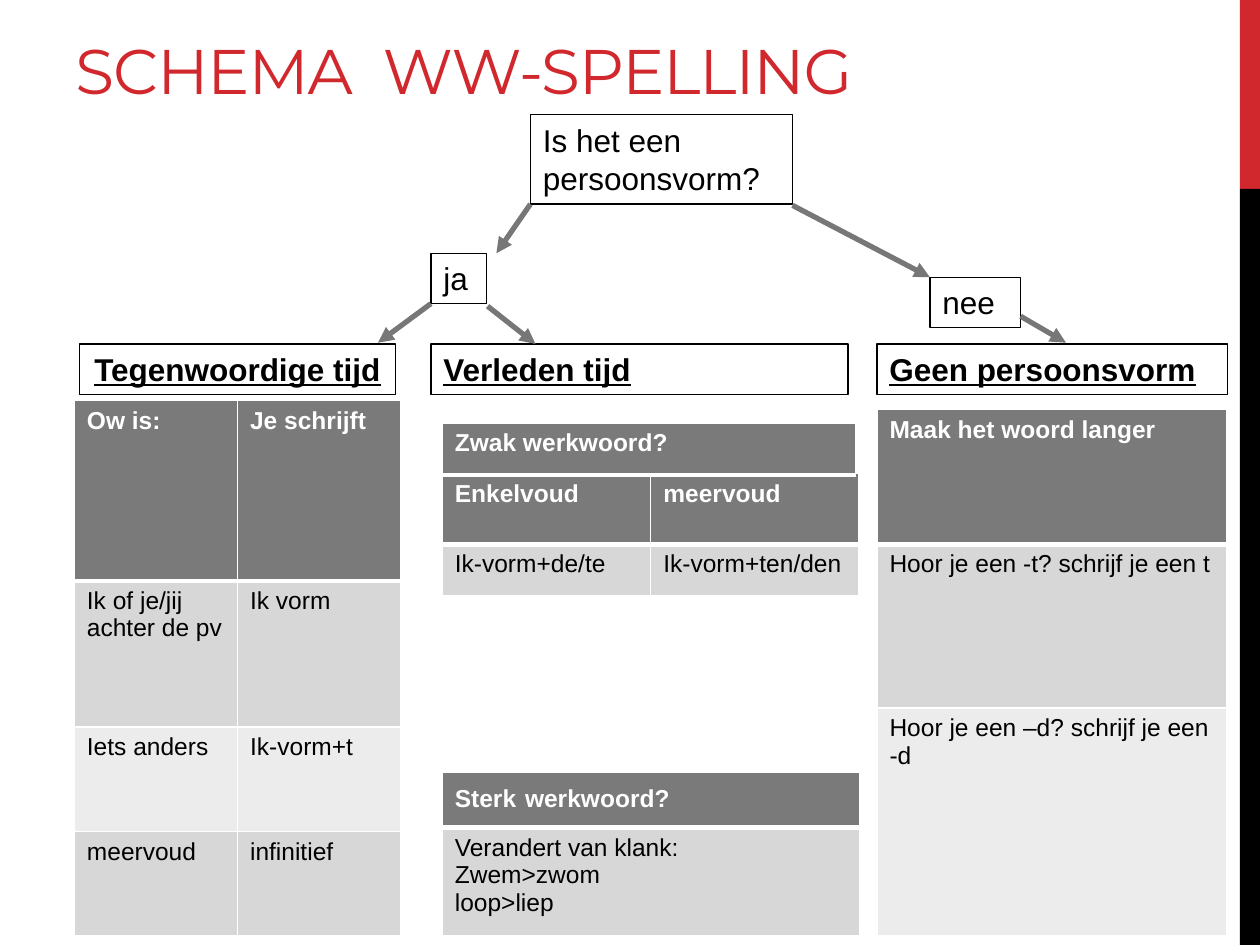
from lxml import etree
from pptx import Presentation
from pptx import util as u
from pptx.dml.color import RGBColor
from pptx.enum import shapes, text
from pptx.oxml.ns import qn

COLORS = {"red": "D1282E", "black": "000000", "white": "FFFFFF", "arrow": "777777",
          "header": "7A7A7A", "dark_row": "D7D7D7", "light_row": "ECECEC"}
BODY = {"name": "Arial", "size": u.Pt(14)}
LABEL = {"name": "Arial", "size": u.Pt(18)}
HEADING = {**LABEL, "bold": True, "underline": True}


def color(name):
    return RGBColor.from_string(COLORS[name])


def inches(values):
    return [u.Inches(value) for value in values]


def write(para, words, style, ink):
    span = para.add_run()
    span.text = words
    for key, value in style.items():
        setattr(span.font, key, value)
    span.font.color.rgb = color(ink)
    return span


def add_side_bar(page, left, top, width, height):
    """Red accent on the upper fifth, black below."""
    accent = height / 5
    for name, y, part in (("red", top, accent), ("black", top + accent, height - accent)):
        bar = page.shapes.add_shape(shapes.MSO_SHAPE.RECTANGLE, *inches((left, y, width, part)))
        bar.shadow.inherit = False
        bar.fill.solid()
        bar.fill.fore_color.rgb = color(name)
        bar.line.fill.background()


def add_title(page, words, *place):
    frame = page.shapes.add_textbox(*inches(place)).text_frame
    frame.word_wrap = True
    frame.vertical_anchor = text.MSO_ANCHOR.BOTTOM
    span = write(frame.paragraphs[0], words, {"name": "Montserrat", "size": u.Pt(36)}, "red")
    span.font._element.set("spc", "-60")


def add_label(page, words, place, style=LABEL, align=text.PP_ALIGN.LEFT):
    box = page.shapes.add_textbox(*inches(place))
    box.line.color.rgb = color("black")
    box.line.width = u.Pt(0.75)
    frame = box.text_frame
    frame.word_wrap = True
    frame.paragraphs[0].alignment = align
    write(frame.paragraphs[0], words, style, "black")


def add_arrow(page, start, end):
    arrow = page.shapes.add_connector(shapes.MSO_CONNECTOR.STRAIGHT, *inches(start + end))
    arrow.line.color.rgb = color("arrow")
    arrow.line.width = u.Pt(3)
    etree.SubElement(arrow.line._get_or_add_ln(), qn("a:tailEnd"), type="triangle")
    etree.SubElement(arrow._element.spPr, qn("a:effectLst"))


def add_borders(cell, is_header, below_header):
    """White rules, thick between the header and the first row."""
    thick = {"lnB": is_header, "lnT": below_header}
    for side in ("lnL", "lnR", "lnT", "lnB"):
        width = u.Pt(3 if thick.get(side) else 1)
        line = etree.SubElement(cell._tc.get_or_add_tcPr(), qn(f"a:{side}"), w=str(int(width)))
        fill = etree.SubElement(line, qn("a:solidFill"))
        etree.SubElement(fill, qn("a:srgbClr"), val=COLORS["white"])


def add_grid(page, left, top, width, heights, rows):
    """Equal columns; a cell is a string, or a list of (words, points) pairs."""
    columns = len(rows[0])
    frame = page.shapes.add_table(len(rows), columns,
                                  *inches((left, top, width, sum(heights))))
    table = frame.table
    for column in table.columns:
        column.width = u.Inches(width / columns)
    for r, (height, row) in enumerate(zip(heights, rows)):
        table.rows[r].height = u.Inches(height)
        fill = "header" if r == 0 else ("light_row", "dark_row")[r % 2]
        for c, content in enumerate(row):
            cell = table.cell(r, c)
            add_borders(cell, r == 0, r == 1)
            cell.fill.solid()
            cell.fill.fore_color.rgb = color(fill)
            if isinstance(content, str):
                lines = [[(line, 14)] for line in content.split("\n")]
            else:
                lines = [content]
            for i, spans in enumerate(lines):
                body = cell.text_frame
                para = body.add_paragraph() if i else body.paragraphs[0]
                for words, points in spans:
                    style = {**BODY, "size": u.Pt(points), "bold": r == 0}
                    write(para, words, style, "white" if r == 0 else "black")


def add_decision_tree(page, left, top):
    def at(x, y):
        return left + x, top + y

    add_label(page, "Is het een persoonsvorm?", at(0.79, 0) + (2.08, 0.71))
    add_label(page, "ja", at(0, 1.1) + (0.44, 0.4))
    add_label(page, "nee", at(3.96, 1.29) + (0.72, 0.4))
    for start, end in (((0.79, 0.71), (0.52, 1.1)), ((0, 1.5), (-0.42, 1.81)),
                       ((0.45, 1.52), (0.83, 1.82)), ((4.68, 1.6), (5.04, 1.81)),
                       ((2.87, 0.72), (3.96, 1.29))):
        add_arrow(page, at(*start), at(*end))


def add_present_tense(page, left, top):
    add_label(page, "Tegenwoordige tijd", (left + 0.04, top, 2.51, 0.4), HEADING,
              text.PP_ALIGN.CENTER)
    add_grid(page, left, top + 0.45, 2.59, (1.43, 1.16, 0.83, 0.83), [
        ("Ow is:", "Je schrijft"),
        ("Ik of je/jij achter de pv", "Ik vorm"),
        ("Iets anders", "Ik-vorm+t"),
        ("meervoud", "infinitief")])


def add_past_tense(page, left, top):
    add_label(page, "Verleden tijd", (left, top, 3.31, 0.4), HEADING)
    inner = left + 0.09
    add_grid(page, inner, top + 1.03, 3.31, (0.56, 0.41), [
        ("Enkelvoud", "meervoud"),
        ("Ik-vorm+de/te", "Ik-vorm+ten/den")])
    add_grid(page, inner, top + 3.4, 3.31, (0.44, 0.86), [
        ([("Sterk", 14), (" ", 18), ("werkwoord?", 14)],),
        ("Verandert van klank:\nZwem>zwom\nloop>liep",)])
    add_grid(page, inner, top + 0.63, 3.28, (0.41,), [("Zwak werkwoord?",)])


def add_other_forms(page, left, top):
    add_label(page, "Geen persoonsvorm", (left, top, 2.78, 0.4), HEADING)
    add_grid(page, left, top + 0.52, 2.78, (1.07, 1.3, 1.81), [
        ("Maak het woord langer",),
        ("Hoor je een -t? schrijf je een t",),
        ("Hoor je een –d? schrijf je een -d",)])


def main():
    deck = Presentation()
    deck.slide_width, deck.slide_height = inches((10, 7.5))
    page = deck.slides.add_slide(deck.slide_layouts[6])
    add_side_bar(page, 9.84, 0, 0.16, 7.5)
    add_title(page, "SCHEMA  WW-SPELLING", 0.5, 0.17, 8.64, 0.73)
    add_present_tense(page, 0.59, 2.73)
    add_past_tense(page, 3.42, 2.73)
    add_other_forms(page, 6.96, 2.73)
    add_decision_tree(page, 3.42, 0.91)
    deck.save("out.pptx")


if __name__ == "__main__":
    main()
